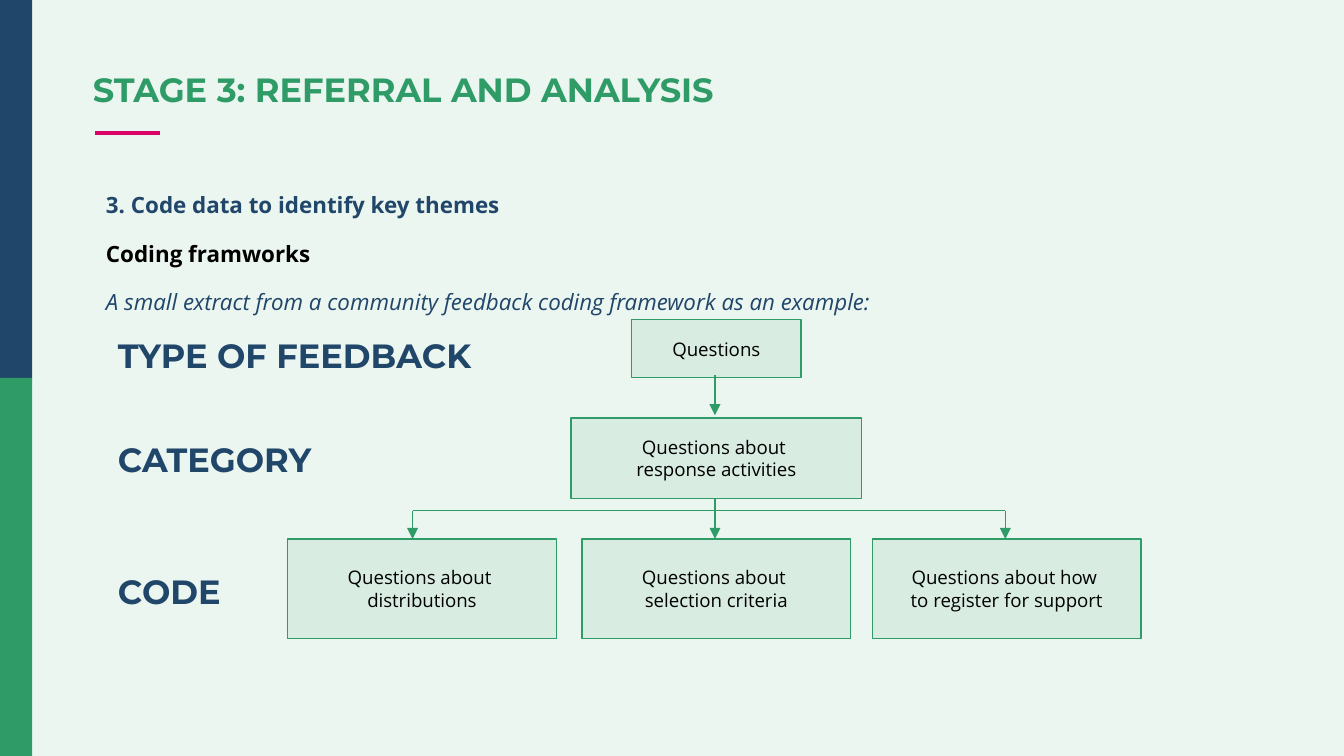
from lxml import etree
from pptx import Presentation
from pptx.dml.color import RGBColor
from pptx.enum.shapes import MSO_CONNECTOR, MSO_SHAPE
from pptx.enum.text import MSO_ANCHOR, PP_ALIGN
from pptx.oxml.ns import qn
from pptx.util import Inches, Pt

GREEN = RGBColor(0x2F, 0x9C, 0x67)
NAVY = RGBColor(0x20, 0x46, 0x69)
PINK = RGBColor(0xD9, 0x03, 0x68)
BLACK = RGBColor(0, 0, 0)
PALE_GREEN = RGBColor(0xEC, 0xF6, 0xF1)

HEADING_FONT = "Montserrat"
BODY_FONT = "Open Sans"

SLIDE_WIDTH = 10
SLIDE_HEIGHT = SLIDE_WIDTH * 9 / 16
CODE_WIDTH = 2
CODE_TOP = 4.01
BRANCH_Y = 3.8
TRUNK_X = 5.32


def write(paragraph, text, size=12, font=BODY_FONT, color=NAVY, bold=False,
          italic=False, align=PP_ALIGN.LEFT, spacing=None, before=0):
    """Fill a paragraph with text in the given format."""
    paragraph.text = text
    paragraph.alignment = align
    if spacing:
        paragraph.line_spacing = spacing
    if before:
        paragraph.space_before = Pt(before)
    for run in paragraph.runs:
        run.font.size = Pt(size)
        run.font.name = font
        run.font.color.rgb = color
        run.font.bold = bold
        run.font.italic = italic


def add_text_area(slide, left, top, width, height):
    """Add a wrapping text box and return its text frame."""
    area = slide.shapes.add_textbox(
        Inches(left), Inches(top), Inches(width), Inches(height))
    area.text_frame.word_wrap = True
    return area.text_frame


def add_rectangle(slide, left, top, width, height, color):
    """Add a filled rectangle without outline or shadow."""
    rectangle = slide.shapes.add_shape(
        MSO_SHAPE.RECTANGLE, Inches(left), Inches(top), Inches(width), Inches(height))
    rectangle.shadow.inherit = False
    rectangle.fill.solid()
    rectangle.fill.fore_color.rgb = color
    rectangle.line.fill.background()
    return rectangle


def add_node(slide, text, left, top, width, height):
    """Add a translucent green box of the coding tree."""
    node = add_rectangle(slide, left, top, width, height, GREEN)
    tint = node.fill._xPr.find(qn("a:solidFill"))[0]
    etree.SubElement(tint, qn("a:alpha"), val="10000")
    node.line.color.rgb = GREEN
    node.line.width = Pt(0.75)
    node.text_frame.word_wrap = True
    node.text_frame.vertical_anchor = MSO_ANCHOR.MIDDLE
    write(node.text_frame.paragraphs[0], text, size=10, color=BLACK,
          align=PP_ALIGN.CENTER)


def add_line(slide, start, end, color=GREEN, width=0.75, arrow=False):
    """Add a straight line, with an arrowhead at its end on request."""
    line = slide.shapes.add_connector(
        MSO_CONNECTOR.STRAIGHT, *map(Inches, (*start, *end)))
    line.line.color.rgb = color
    line.line.width = Pt(width)
    if arrow:
        etree.SubElement(line.line._get_or_add_ln(), qn("a:tailEnd"), type="triangle")
    etree.SubElement(line._element.spPr, qn("a:effectLst"))


def add_frame(slide):
    """Add the background, side bands, title and title rule."""
    slide.background.fill.solid()
    slide.background.fill.fore_color.rgb = PALE_GREEN
    band_height = SLIDE_HEIGHT / 2
    for top, color in ((0, NAVY), (band_height, GREEN)):
        add_rectangle(slide, 0, top, 0.24, band_height, color)
    add_line(slide, (0.71, 0.99), (1.19, 0.99), color=PINK, width=2.25)
    title = add_text_area(slide, 0.69, 0.5, 8.62, 0.37)
    title.margin_left = 0
    write(title.paragraphs[0], "STAGE 3: REFERRAL AND ANALYSIS", size=18,
          font=HEADING_FONT, color=GREEN, bold=True, spacing=0.9)


def add_introduction(slide):
    """Add the three introductory lines."""
    introduction = add_text_area(slide, 0.69, 1.32, 8.62, 3.57)
    write(introduction.paragraphs[0], "3. Code data to identify key themes",
          bold=True, spacing=1.28)
    write(introduction.add_paragraph(), "Coding framworks",
          color=BLACK, bold=True, spacing=1.28, before=7.5)
    write(introduction.add_paragraph(),
          "A small extract from a community feedback coding framework as an example:",
          italic=True, spacing=1.28, before=7.5)


def add_coding_tree(slide):
    """Add the boxes and arrows from feedback type down to codes."""
    add_line(slide, (TRUNK_X, 2.79), (TRUNK_X, 3.09), arrow=True)
    add_node(slide, "Questions", 4.7, 2.38, 1.26, 0.43)
    add_node(slide, "Questions about \vresponse activities", 4.25, 3.11, 2.16, 0.6)
    codes = (
        ("Questions about \vdistributions", 2.14, 3.07),
        ("Questions about \vselection criteria", 4.33, TRUNK_X),
        ("Questions about how \vto register for support", 6.49, 7.48),
    )
    for text, left, arrow_x in codes:
        add_node(slide, text, left, CODE_TOP, CODE_WIDTH, 0.74)
        add_line(slide, (arrow_x, BRANCH_Y), (arrow_x, CODE_TOP), arrow=True)
    add_line(slide, (codes[0][2], BRANCH_Y), (codes[-1][2], BRANCH_Y))
    add_line(slide, (TRUNK_X, BRANCH_Y), (TRUNK_X, 3.71))


def add_level_labels(slide):
    """Add the names of the three levels of the tree."""
    levels = (("TYPE OF FEEDBACK", 2.44, 2.93), ("CATEGORY", 3.22, 1.73),
              ("CODE", 4.2, 1.04))
    for name, top, width in levels:
        label = add_text_area(slide, 0.78, top, width, 0.4)
        write(label.paragraphs[0], name, size=18, font=HEADING_FONT, bold=True)


def main():
    """Build the slide and save it."""
    deck = Presentation()
    deck.slide_width, deck.slide_height = Inches(SLIDE_WIDTH), Inches(SLIDE_HEIGHT)
    slide = deck.slides.add_slide(deck.slide_layouts[6])
    add_frame(slide)
    add_introduction(slide)
    add_coding_tree(slide)
    add_level_labels(slide)
    deck.save("out.pptx")


if __name__ == "__main__":
    main()
